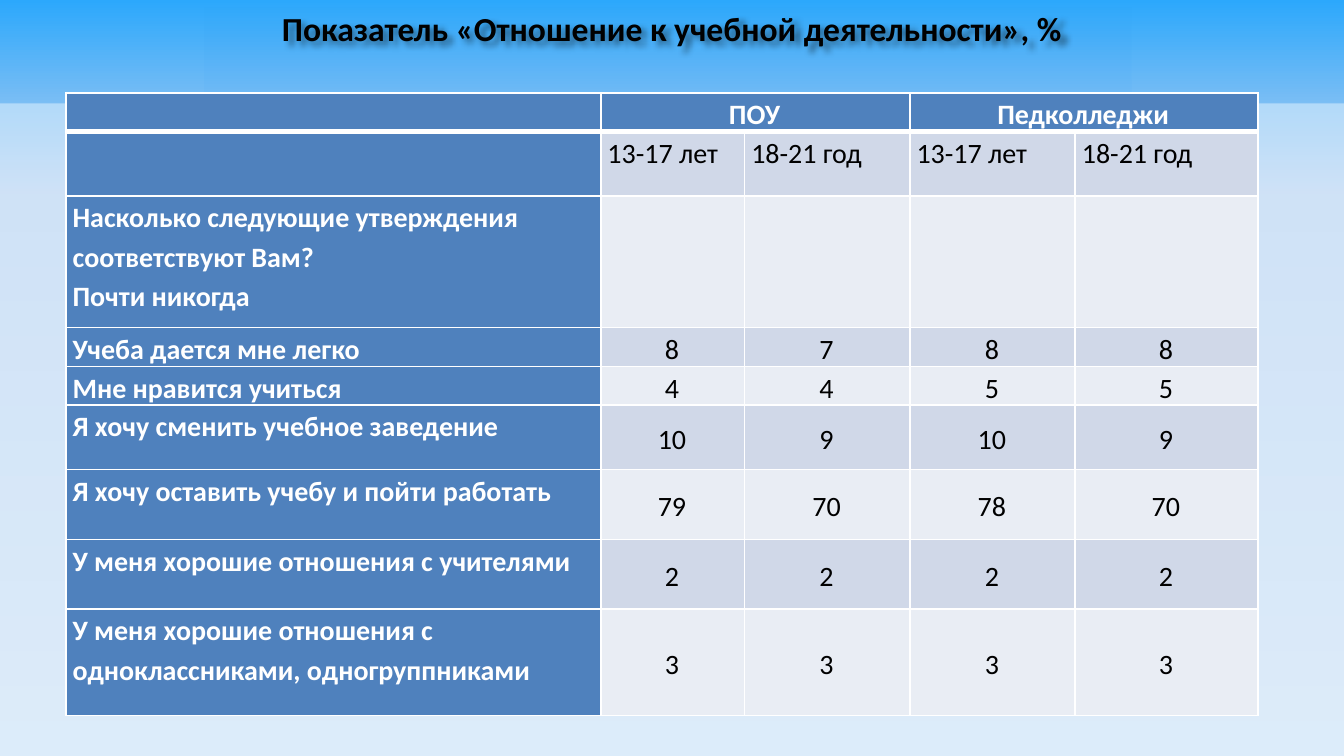
from dataclasses import dataclass

from lxml.etree import SubElement as Sub
from pptx import Presentation
from pptx.dml.color import RGBColor as Rgb
from pptx.enum.shapes import MSO_SHAPE as Kind
from pptx.enum.text import MSO_ANCHOR as Anchor, PP_ALIGN as Align
from pptx.oxml import parse_xml as parse
from pptx.oxml.ns import nsdecls, qn
from pptx.util import Inches, Pt

WIDE = Inches(10)
HIGH = WIDE * 9 // 16
UNIT = Inches(0.01)
FONT = "Calibri"
INK = {
    "sky": "2CA8FC", "mist": "C2D1ED", "pale": "E1E8F5", "veil": "DAEFFE",
    "band": "299AF7", "head": "4F81BD", "odd": "D0D8E8", "even": "E9EDF4",
    "white": "FFFFFF", "black": "000000",
}
STOPS = ((0, "sky"), (26, "mist"), (100, "pale"))
COLS = (398, 107, 123, 123, 136)
ROWS = (27, 48, 98, 27, 27, 48, 52, 52, 79)
TALL = 460
AGES = ("13-17 лет", "18-21 год")
DATA = (
    ("", "ПОУ", "", "Педколледжи", ""),
    ("", *AGES, *AGES),
    ("Насколько следующие утверждения соответствуют Вам?\nПочти никогда", "", "", "", ""),
    ("Учеба дается мне легко", 8, 7, 8, 8),
    ("Мне нравится учиться", 4, 4, 5, 5),
    ("Я хочу сменить учебное заведение", 10, 9, 10, 9),
    ("Я хочу оставить учебу и пойти работать", 79, 70, 78, 70),
    ("У меня хорошие отношения с учителями", 2, 2, 2, 2),
    ("У меня хорошие отношения с одноклассниками, одногруппниками", 3, 3, 3, 3),
)


@dataclass
class Box:
    left: float
    top: float
    width: float
    height: float

    def place(self) -> tuple:
        return (int(self.left * WIDE), int(self.top * HIGH),
                int(self.width * WIDE), int(self.height * HIGH))


@dataclass
class Panel:
    box: Box
    ink: str
    alpha: int


PANELS = (
    Panel(Box(0, 0.137, 1, 0.863), "veil", 58),
    Panel(Box(0.152, 0.01, 0.69, 0.13), "band", 5),
)


def apply(item, form: dict) -> None:
    for key, value in form.items():
        setattr(item, key, value)


def style(font, size: int, ink: str, bold: bool) -> None:
    font.color.rgb = Rgb.from_string(INK[ink])
    apply(font, {"name": FONT, "size": Pt(size), "bold": bold})


def backdrop(slide) -> None:
    stops = "".join(f'<a:gs pos="{pos * 1000}"><a:srgbClr val="{INK[ink]}"/></a:gs>'
                    for pos, ink in STOPS)
    slide._element.cSld.insert(0, parse(
        f'<p:bg {nsdecls("p", "a")}><p:bgPr><a:gradFill rotWithShape="1">'
        f'<a:gsLst>{stops}</a:gsLst><a:lin ang="5400000" scaled="0"/></a:gradFill>'
        '<a:effectLst/></p:bgPr></p:bg>'))


def draw_panel(slide, panel: Panel) -> None:
    shape = slide.shapes.add_shape(Kind.RECTANGLE, *panel.box.place())
    shape.shadow.inherit = False
    shape.line.fill.background()
    shape.fill.solid()
    shape.fill.fore_color.rgb = Rgb.from_string(INK[panel.ink])
    tone = shape._element.spPr.find(".//" + qn("a:srgbClr"))
    Sub(tone, qn("a:alpha"), val=str(panel.alpha * 1000))


def draw_title(slide, text: str, box: Box) -> None:
    shape = slide.shapes.add_textbox(*box.place())
    shape._element.spPr.append(parse(
        f'<a:effectLst {nsdecls("a")}><a:outerShdw blurRad="38100" dist="38100" '
        'dir="2700000"><a:srgbClr val="000000"><a:alpha val="43000"/></a:srgbClr>'
        '</a:outerShdw></a:effectLst>'))
    frame = shape.text_frame
    apply(frame, {"word_wrap": True, "vertical_anchor": Anchor.TOP,
                  "margin_top": 0, "margin_bottom": 0})
    line = frame.paragraphs[0]
    line.alignment = Align.CENTER
    run = line.add_run()
    run.text = text
    style(run.font, 18, "black", True)


def edge(cell, row: int) -> None:
    thick = {"L": 1, "R": 1, "T": 3 if row == 1 else 1, "B": 3 if row == 0 else 1}
    for spot, (side, size) in enumerate(thick.items()):
        cell._tc.get_or_add_tcPr().insert(spot, parse(
            f'<a:ln{side} {nsdecls("a")} w="{Pt(size)}"><a:solidFill>'
            f'<a:srgbClr val="{INK["white"]}"/></a:solidFill></a:ln{side}>'))


def fill_cell(cell, row: int, col: int, value) -> None:
    head = row == 0 or col == 0
    count = isinstance(value, int)
    apply(cell, {"margin_left": Inches(0.05), "margin_right": Inches(0.06),
                 "margin_top": 0, "margin_bottom": 0,
                 "vertical_anchor": Anchor.MIDDLE if count else Anchor.TOP})
    cell.fill.solid()
    tone = "head" if head else "odd" if row % 2 else "even"
    cell.fill.fore_color.rgb = Rgb.from_string(INK[tone])
    edge(cell, row)
    cell.text_frame.text = str(value)
    for line in cell.text_frame.paragraphs:
        apply(line, {"line_spacing": 1.15,
                     "alignment": Align.CENTER if count or row == 0 else Align.LEFT})
        for run in line.runs:
            style(run.font, 15, "white" if head else "black", head)
        if not line.runs:
            Sub(line._p, qn("a:endParaRPr"), sz="1500")


def draw_table(slide) -> None:
    frame = slide.shapes.add_table(
        len(ROWS), len(COLS), 49 * UNIT, 69 * UNIT,
        sum(COLS) * UNIT, TALL * UNIT)
    table = frame.table
    apply(table, {"first_row": False, "horz_banding": False})
    for col, size in zip(table.columns, COLS):
        col.width = size * UNIT
    for row, size in zip(table.rows, ROWS):
        row.height = size * UNIT
    frame.height = TALL * UNIT
    for row, line in enumerate(DATA):
        for col, value in enumerate(line):
            fill_cell(table.cell(row, col), row, col, value)
    for col in (1, 3):
        table.cell(0, col).merge(table.cell(0, col + 1))


def main() -> None:
    deck = Presentation()
    apply(deck, {"slide_width": WIDE, "slide_height": HIGH})
    slide = deck.slides.add_slide(deck.slide_layouts[6])
    backdrop(slide)
    for panel in PANELS:
        draw_panel(slide, panel)
    draw_title(slide, "Показатель «Отношение к учебной деятельности», %",
               Box(0.075, 0.01, 0.85, 0.08))
    draw_table(slide)
    deck.save("out.pptx")


if __name__ == "__main__":
    main()
